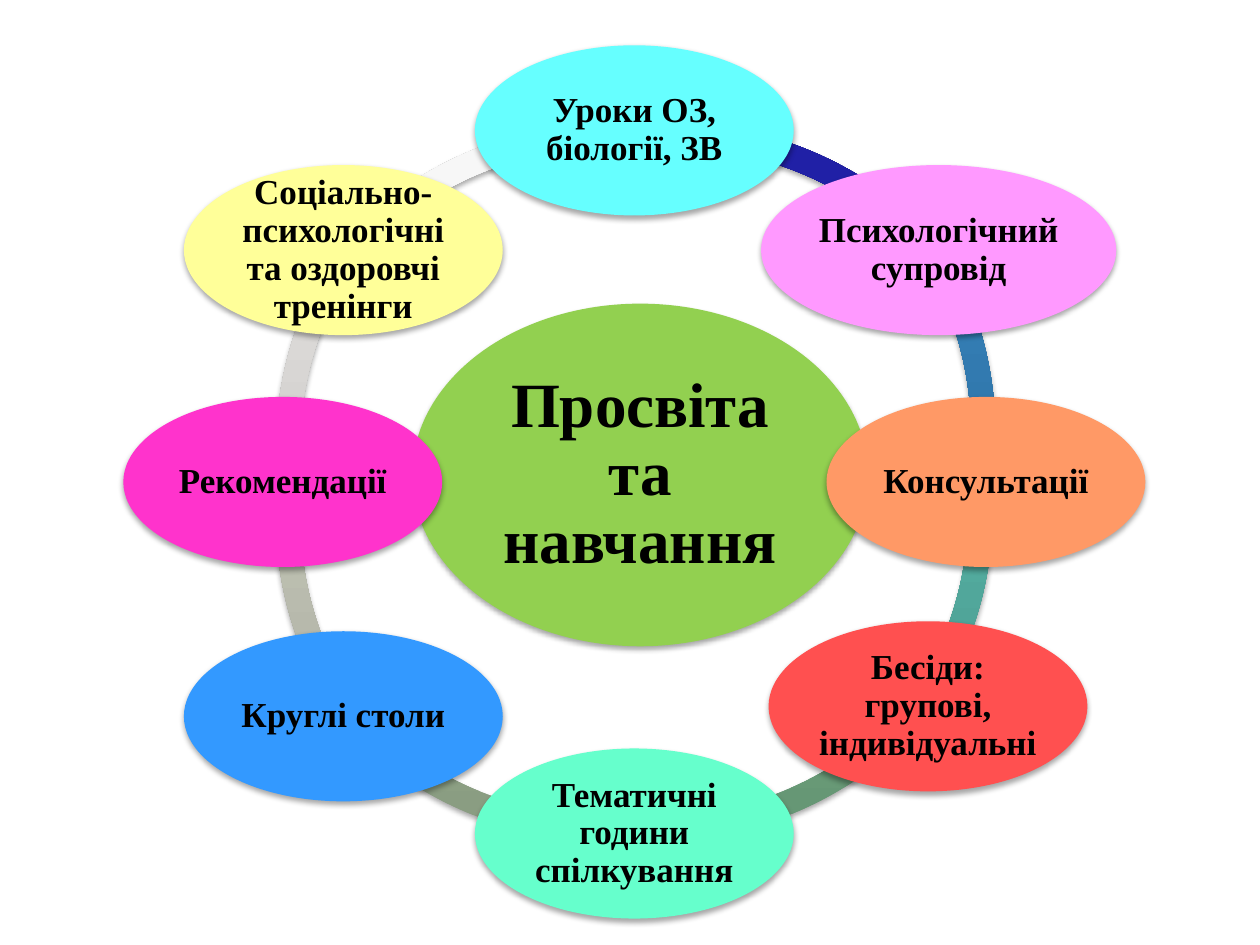
from dataclasses import dataclass

from lxml.etree import SubElement
from pptx import Presentation
from pptx.dml.color import RGBColor
from pptx.enum.shapes import MSO_SHAPE
from pptx.enum.text import MSO_ANCHOR, PP_ALIGN
from pptx.oxml import parse_xml
from pptx.oxml.ns import nsdecls, qn
from pptx.util import Pt


@dataclass(frozen=True)
class Theme:
    font: str = "Times New Roman"
    text: str = "000000"
    hub: str = "92D050"
    hub_size: int = 36
    topic_size: int = 20
    cyan: str = "66FFFF"
    pink: str = "FF99FF"
    orange: str = "FF9966"
    red: str = "FF5050"
    mint: str = "66FFCC"
    blue: str = "3399FF"
    magenta: str = "FF33CC"
    yellow: str = "FFFF99"
    # Gradient stops of the ring segments, counter-clockwise from the top
    ring: tuple = (
        ("BEBEBE", "F7F7F7", "F8F8F8"),
        ("AFAEAC", "E4E2E0", "E5E3E1"),
        ("A2A498", "D2D5C5", "D4D6C5"),
        ("889B80", "B0C9A6", "B0CBA6"),
        ("659573", "83C295", "82C495"),
        ("479388", "5CBEB0", "5BC1B2"),
        ("296490", "3582BB", "3383BE"),
        ("1B1B7E", "2323A3", "2020A6"),
    )


THEME = Theme()

# Left, top, start angle and end angle of each ring segment
RING_SEGMENTS = (
    (143.3, 70.6, 221.17, 274.46),
    (157.7, 51.8, 174.41, 214.33),
    (157.7, 91.4, 145.63, 185.82),
    (141.8, 72, 85.32, 138.5),
    (171.4, 72, 39.47, 93.66),
    (159.1, 87.8, 355.22, 33.67),
    (160.6, 43.2, 328.65, 8.11),
    (180.7, 70.6, 263.76, 319.05),
)
RING_DIAMETER = 408.2
RING_THICKNESS = 0.034

TOPIC_WIDTH, WIDE_TOPIC_WIDTH, TOPIC_HEIGHT = 182.2, 203, 97.2

# Text, centre x, centre y, width and colour of each topic
TOPICS = (
    ("Уроки ОЗ, біології, ЗВ", 362.5, 74.5, TOPIC_WIDTH, THEME.cyan),
    ("Психологічний супровід", 536.4, 142.9, WIDE_TOPIC_WIDTH, THEME.pink),
    ("Консультації", 563.4, 275.4, TOPIC_WIDTH, THEME.orange),
    ("Бесіди: групові, індивідуальні", 530.3, 403.6, TOPIC_WIDTH, THEME.red),
    ("Тематичні години спілкування", 362.5, 476.3, TOPIC_WIDTH, THEME.mint),
    ("Круглі столи", 196.2, 409.3, TOPIC_WIDTH, THEME.blue),
    ("Рекомендації", 161.6, 275.4, TOPIC_WIDTH, THEME.magenta),
    ("Соціально-психологічні та оздоровчі тренінги", 196.2, 142.9,
     TOPIC_WIDTH, THEME.yellow),
)


class SlideBuilder:
    def __init__(self, slide, theme):
        self.slide = slide
        self.theme = theme

    def add_shape(self, kind, left, top, width, height):
        """Add a preset shape without outline, with the soft drop shadow."""
        shape = self.slide.shapes.add_shape(
            kind, Pt(left), Pt(top), Pt(width), Pt(height))
        shape.line.fill.background()
        shape.shadow.inherit = False
        effects = shape._element.spPr.find(qn("a:effectLst"))
        shadow = SubElement(
            effects, qn("a:outerShdw"), blurRad=str(Pt(3.15)),
            dist=str(Pt(1.8)), dir="5400000", rotWithShape="0")
        color = SubElement(shadow, qn("a:srgbClr"), val="000000")
        SubElement(color, qn("a:alpha"), val="35000")
        return shape

    def add_ring_segment(self, left, top, start, end, colors):
        shape = self.add_shape(
            MSO_SHAPE.BLOCK_ARC, left, top, RING_DIAMETER, RING_DIAMETER)
        # Angles are stored as 60000ths of a degree, adjustments as 100000ths
        shape.adjustments[0] = start * 0.6
        shape.adjustments[1] = end * 0.6
        shape.adjustments[2] = RING_THICKNESS
        stops = "".join(
            f'<a:gs pos="{position}"><a:srgbClr val="{color}"/></a:gs>'
            for position, color in zip((0, 80000, 100000), colors))
        gradient = parse_xml(
            f'<a:gradFill {nsdecls("a")} rotWithShape="1">'
            f'<a:gsLst>{stops}</a:gsLst>'
            '<a:lin ang="16200000" scaled="0"/></a:gradFill>')
        shape._element.spPr.find(qn("a:prstGeom")).addnext(gradient)

    def add_oval(self, text, center_x, center_y, width, height, color, size):
        shape = self.add_shape(
            MSO_SHAPE.OVAL, center_x - width / 2, center_y - height / 2,
            width, height)
        shape.fill.solid()
        shape.fill.fore_color.rgb = RGBColor.from_string(color)
        frame = shape.text_frame
        frame.word_wrap = True
        frame.vertical_anchor = MSO_ANCHOR.MIDDLE
        inset = Pt(size / 10)
        frame.margin_left = frame.margin_right = inset
        frame.margin_top = frame.margin_bottom = inset
        frame.text = text
        paragraph = frame.paragraphs[0]
        paragraph.alignment = PP_ALIGN.CENTER
        paragraph.line_spacing = 0.9
        paragraph.space_after = Pt(size * 0.35)
        font = paragraph.runs[0].font
        font.name = self.theme.font
        font.size = Pt(size)
        font.bold = True
        font.color.rgb = RGBColor.from_string(self.theme.text)


def main():
    presentation = Presentation()
    presentation.slide_width, presentation.slide_height = Pt(720), Pt(540)
    slide = presentation.slides.add_slide(presentation.slide_layouts[6])
    builder = SlideBuilder(slide, THEME)

    for segment, colors in zip(RING_SEGMENTS, THEME.ring):
        builder.add_ring_segment(*segment, colors)
    builder.add_oval("Просвіта та навчання", 365.8, 271.4, 260.6, 195.8,
                     THEME.hub, THEME.hub_size)
    for text, center_x, center_y, width, color in TOPICS:
        builder.add_oval(text, center_x, center_y, width, TOPIC_HEIGHT,
                         color, THEME.topic_size)

    presentation.save("out.pptx")


if __name__ == "__main__":
    main()
